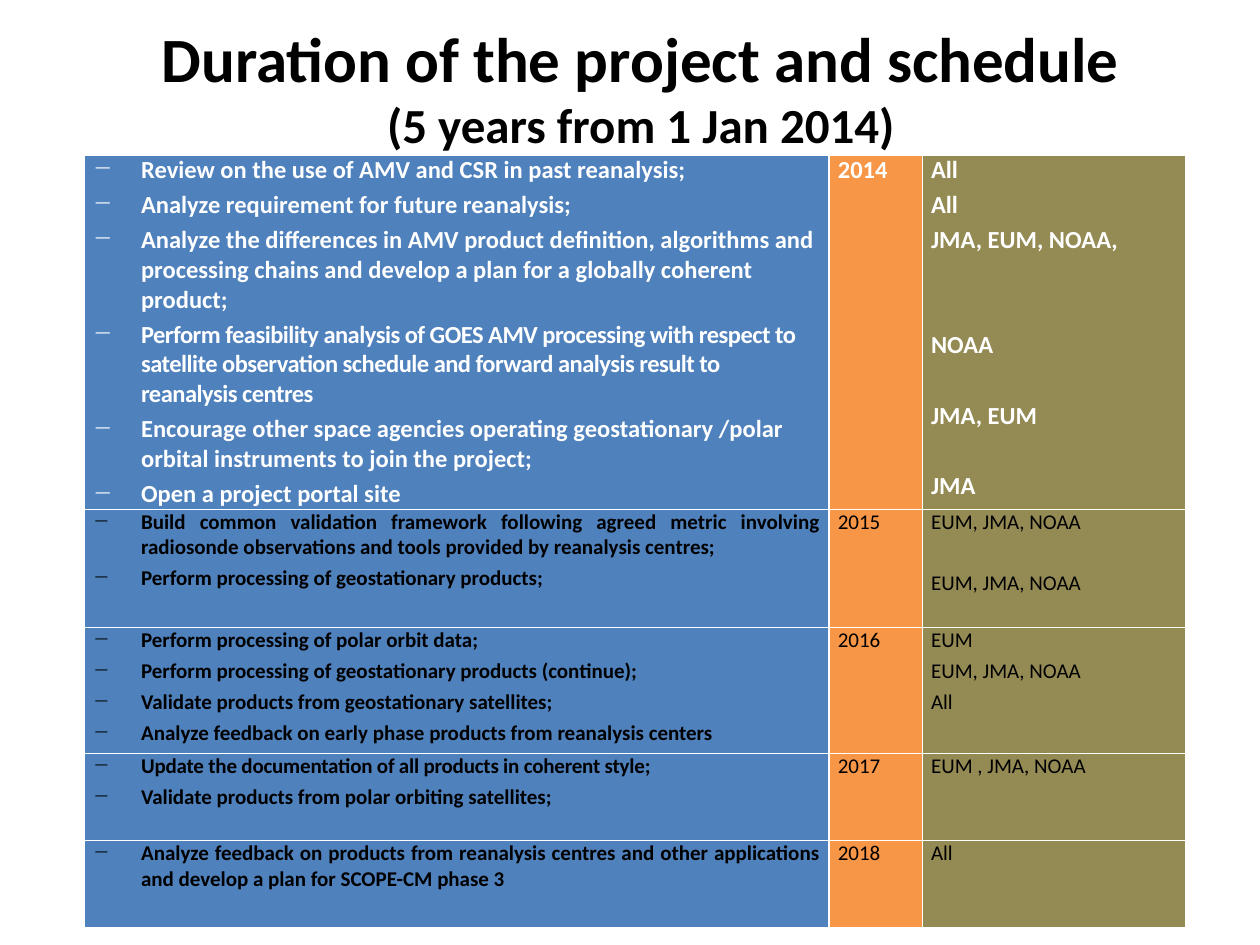
import pptx
import pptx.dml.color
import pptx.enum.text
import pptx.oxml.ns
import pptx.util
from lxml import etree

Inches = pptx.util.Inches
Pt = pptx.util.Pt
RGBColor = pptx.dml.color.RGBColor
Align = pptx.enum.text.PP_ALIGN

BLACK = RGBColor(0x00, 0x00, 0x00)
WHITE = RGBColor(0xFF, 0xFF, 0xFF)
BLUE = RGBColor(0x4F, 0x81, 0xBD)
ORANGE = RGBColor(0xF7, 0x96, 0x46)
OLIVE = RGBColor(0x94, 0x8A, 0x54)
FONT = "Calibri"
LINE_HEIGHT = 1.22
SPACE_BEFORE = 3

TITLE = [("Duration of the project and schedule", 36), ("(5 years from 1 Jan 2014)", 28)]

# Each partner is paired with the number of lines skipped above it.
SCHEDULE = [
    {"year": "2014", "height": 2.81,
     "tasks": [
         "Review on the use of AMV and CSR in past reanalysis;",
         "Analyze requirement for future reanalysis;",
         "Analyze the differences in AMV product definition, algorithms and processing chains "
         "and develop a plan for a globally coherent product;",
         "Perform feasibility analysis of GOES AMV processing with respect to satellite "
         "observation schedule and forward analysis result to reanalysis centres",
         "Encourage other space agencies operating geostationary /polar orbital instruments "
         "to join the project;",
         "Open a project portal site"],
     "partners": [("All", 0), ("All", 0), ("JMA, EUM, NOAA,", 0), ("NOAA", 2),
                  ("JMA, EUM", 1), ("JMA", 1)]},
    {"year": "2015", "height": 0.94,
     "tasks": [
         "Build common validation framework following agreed metric involving radiosonde "
         "observations and tools provided by reanalysis centres;",
         "Perform processing of geostationary products;"],
     "partners": [("EUM, JMA, NOAA", 0), ("EUM, JMA, NOAA", 1)]},
    {"year": "2016", "height": 1.0,
     "tasks": [
         "Perform processing of polar orbit data;",
         "Perform processing of geostationary products (continue);",
         "Validate products from geostationary satellites;",
         "Analyze feedback on early phase products from reanalysis centers"],
     "partners": [("EUM", 0), ("EUM, JMA, NOAA", 0), ("All", 0)]},
    {"year": "2017", "height": 0.69,
     "tasks": [
         "Update the documentation of all products in coherent style;",
         "Validate products from polar orbiting satellites;"],
     "partners": [("EUM , JMA, NOAA", 0)]},
    {"year": "2018", "height": 0.69,
     "tasks": [
         "Analyze feedback on products from reanalysis centres and other applications "
         "and develop a plan for SCOPE-CM phase 3"],
     "partners": [("All", 0)]},
]
LETTER_SPACING = {("2014", 3): -0.3, ("2017", 0): -0.1}
COLUMNS = [(5.91, BLUE), (0.74, ORANGE), (2.09, OLIVE)]


def add_dash(para):
    properties = para._p.get_or_add_pPr()
    properties.set("marL", str(Inches(0.38)))
    properties.set("indent", str(Inches(-0.38)))
    bullet = etree.SubElement(properties, pptx.oxml.ns.qn("a:buChar"))
    bullet.set("char", "−")


def fill_cell(cell, lines, color, size, bold, font_color, align):
    cell.margin_left = cell.margin_right = Inches(0.07)
    cell.margin_top = cell.margin_bottom = 0
    cell.fill.solid()
    cell.fill.fore_color.rgb = color
    frame = cell.text_frame
    frame.text = "\n".join(text for text, skipped in lines)
    for para, (text, skipped) in zip(frame.paragraphs, lines):
        para.alignment = align
        para.space_before = Pt(round(SPACE_BEFORE + skipped * (size * LINE_HEIGHT + SPACE_BEFORE), 1))
        for font in (para.font, para.runs[0].font):
            font.name, font.size, font.bold = FONT, Pt(size), bold
            font.color.rgb = font_color


def add_title(page):
    title = page.shapes.title
    title.left, title.top, title.width, title.height = map(Inches, (0.28, 0.06, 9.61, 1.25))
    title.text_frame.vertical_anchor = pptx.enum.text.MSO_ANCHOR.MIDDLE
    para = title.text_frame.paragraphs[0]
    para.alignment = Align.CENTER
    para.font.name, para.font.bold = FONT, True
    for index, (text, size) in enumerate(TITLE):
        if index:
            para.add_line_break()
        span = para.add_run()
        span.text = text
        span.font.name, span.font.size, span.font.bold = FONT, Pt(size), True
        span.font.color.rgb = BLACK


def add_schedule(page):
    width = sum(column_width for column_width, color in COLUMNS)
    height = sum(entry["height"] for entry in SCHEDULE)
    table = page.shapes.add_table(len(SCHEDULE), len(COLUMNS), Inches(0.67), Inches(1.23),
                                  Inches(width), Inches(height)).table
    for column, (column_width, color) in zip(table.columns, COLUMNS):
        column.width = Inches(column_width)
    for index, (row, entry) in enumerate(zip(table.rows, SCHEDULE)):
        row.height = Inches(entry["height"])
        first = index == 0
        size, font_color = (14, WHITE) if first else (12, BLACK)
        contents = [[(task, 0) for task in entry["tasks"]], [(entry["year"], 0)], entry["partners"]]
        for position, (cell, lines) in enumerate(zip(row.cells, contents)):
            is_tasks = position == 0
            align = Align.LEFT if first and is_tasks else Align.JUSTIFY
            fill_cell(cell, lines, COLUMNS[position][1], size, first or is_tasks, font_color, align)
        for number, para in enumerate(row.cells[0].text_frame.paragraphs):
            add_dash(para)
            spacing = LETTER_SPACING.get((entry["year"], number))
            if spacing:
                para.runs[0].font._element.set("spc", str(round(spacing * 100)))


def main():
    deck = pptx.Presentation()
    deck.slide_width, deck.slide_height = Inches(10), Inches(7.5)
    page = deck.slides.add_slide(deck.slide_layouts[5])
    add_title(page)
    add_schedule(page)
    deck.save("out.pptx")


if __name__ == "__main__":
    main()
